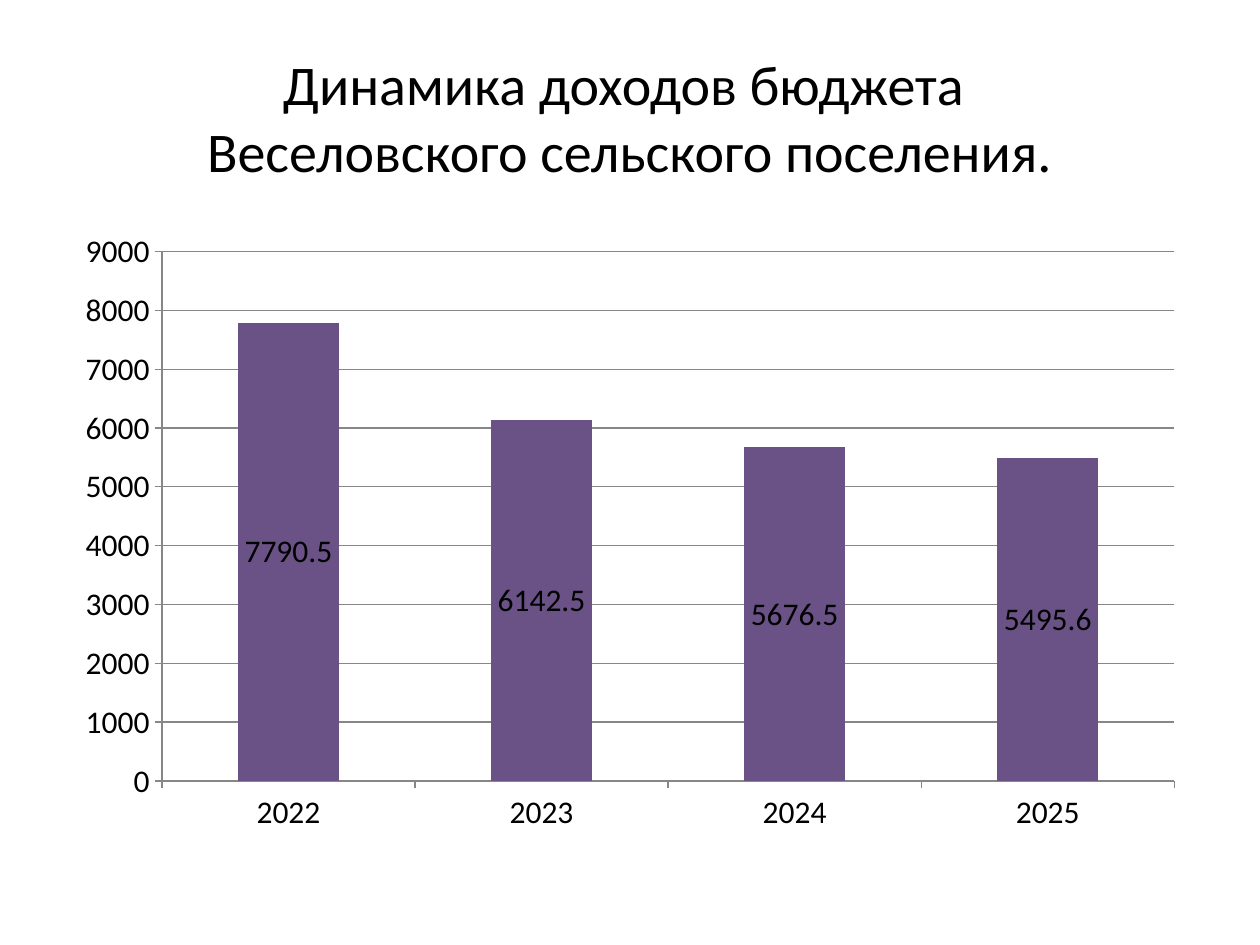
from pptx import Presentation
from pptx.chart.data import CategoryChartData
from pptx.dml.color import RGBColor
from pptx.enum.chart import XL_CHART_TYPE as ChartType, XL_LABEL_POSITION as LabelPos, XL_TICK_MARK as Tick
from pptx.enum.text import MSO_ANCHOR, PP_ALIGN
from pptx.util import Emu, Pt

PX_PER_INCH = 126
FONT = "Calibri"
COLORS = {"text": "000000", "line": "878787", "income": "6A5286",
          "second": "C0504D", "third": "9BBB59"}
YEARS = ["2022", "2023", "2024", "2025"]
SERIES = [("Series 1", [7790.5, 6142.5, 5676.5, 5495.6], "income"),
          ("Series 2", [0, 0, 0, 0], "second"),
          ("Series 3", [0, 0, 0, 0], "third")]


def px(n):
    return Emu(round(n * 914400 / PX_PER_INCH))


def rgb(name):
    return RGBColor.from_string(COLORS[name])


def set_font(font, size):
    font.name = FONT
    font.size = Pt(size)
    font.color.rgb = rgb("text")


def set_line(line):
    line.color.rgb = rgb("line")
    line.width = Pt(0.75)


def add_title(slide, box):
    title = slide.shapes.title
    title.left, title.top, title.width, title.height = map(px, box)
    tf = title.text_frame
    tf.text = "Динамика доходов бюджета \vВеселовского сельского поселения."
    tf.vertical_anchor = MSO_ANCHOR.MIDDLE
    p = tf.paragraphs[0]
    p.alignment = PP_ALIGN.CENTER
    set_font(p.font, 32)


def add_income_chart(slide, box):
    data = CategoryChartData()
    data.categories = YEARS
    for name, values, _ in SERIES:
        data.add_series(name, values)
    chart = slide.shapes.add_chart(ChartType.COLUMN_STACKED, *map(px, box), data).chart
    chart.has_title = False
    chart.has_legend = False
    set_font(chart.font, 18)

    plot = chart.plots[0]
    plot.gap_width = 150
    plot.overlap = 100
    plot.vary_by_categories = False
    for series, (_, _, color) in zip(plot.series, SERIES):
        series.format.fill.solid()
        series.format.fill.fore_color.rgb = rgb(color)
    labels = plot.series[0].data_labels
    labels.show_value = True
    labels.position = LabelPos.CENTER
    set_font(labels.font, 18)

    for axis in (chart.category_axis, chart.value_axis):
        axis.major_tick_mark = Tick.OUTSIDE
        axis.minor_tick_mark = Tick.NONE
        set_line(axis.format.line)
    chart.category_axis.has_major_gridlines = False
    values = chart.value_axis
    values.minimum_scale, values.maximum_scale, values.major_unit = 0, 9000, 1000
    values.has_major_gridlines = True
    set_line(values.major_gridlines.format.line)


def main():
    prs = Presentation()
    prs.slide_width, prs.slide_height = px(1260), px(945)
    slide = prs.slides.add_slide(prs.slide_layouts[5])
    add_title(slide, (63, 38, 1134, 158))
    add_income_chart(slide, (63, 220, 1134, 624))
    prs.save("out.pptx")


if __name__ == "__main__":
    main()
